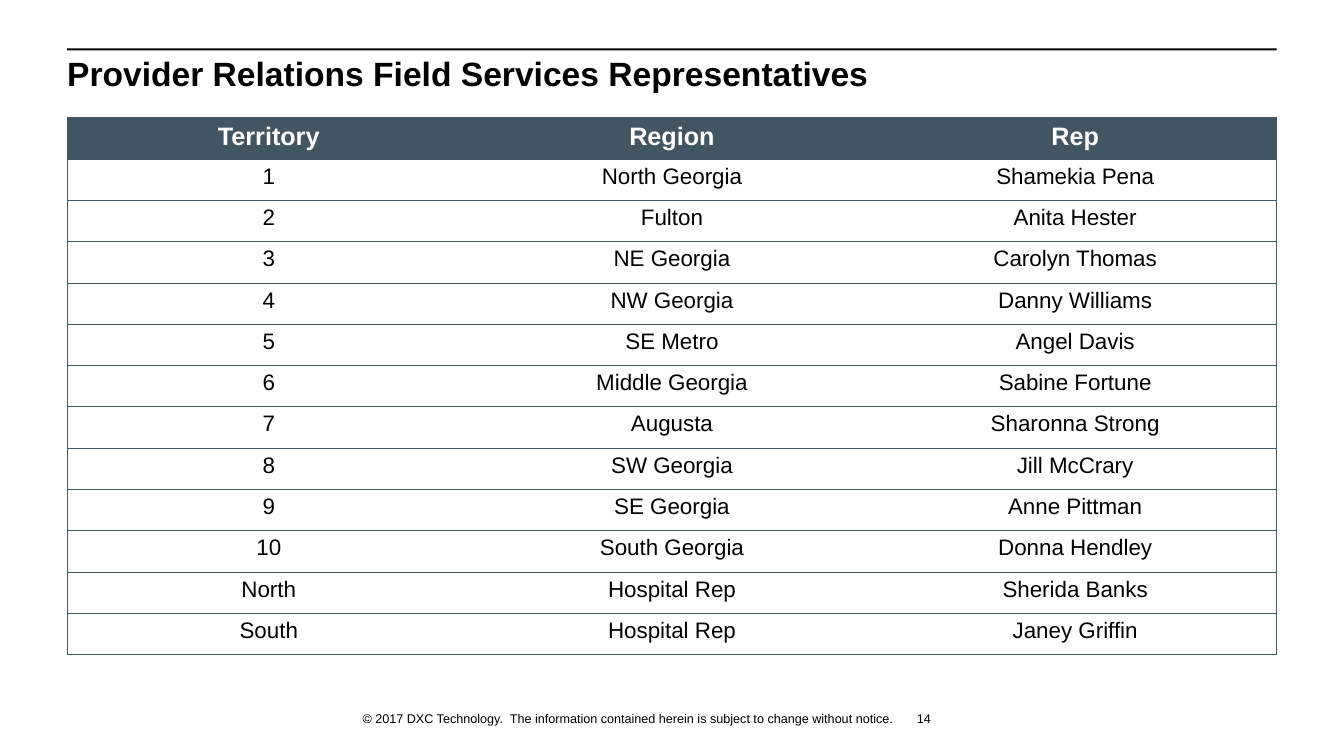
import pptx
import pptx.dml.color
import pptx.enum.shapes
import pptx.enum.text
import pptx.oxml
import pptx.oxml.ns
import pptx.util
from lxml import etree

Pt = pptx.util.Pt
ALIGN = pptx.enum.text.PP_ALIGN
ANCHOR = pptx.enum.text.MSO_ANCHOR
SLATE = "425563"
BLACK = "000000"
WHITE = "FFFFFF"

REPRESENTATIVES = [
    ("Territory", "Region", "Rep"),
    ("1", "North Georgia", "Shamekia Pena"),
    ("2", "Fulton", "Anita Hester"),
    ("3", "NE Georgia", "Carolyn Thomas"),
    ("4", "NW Georgia", "Danny Williams"),
    ("5", "SE Metro", "Angel Davis"),
    ("6", "Middle Georgia", "Sabine Fortune"),
    ("7", "Augusta", "Sharonna Strong"),
    ("8", "SW Georgia", "Jill McCrary"),
    ("9", "SE Georgia", "Anne Pittman"),
    ("10", "South Georgia", "Donna Hendley"),
    ("North", "Hospital Rep", "Sherida Banks"),
    ("South", "Hospital Rep", "Janey Griffin"),
]


def color(hex_value):
    return pptx.dml.color.RGBColor.from_string(hex_value)


def write(frame, text, size, hex_value, align, bold=False):
    frame.text = text
    paragraph = frame.paragraphs[0]
    paragraph.alignment = align
    for run in paragraph.runs:
        run.font.name = "Arial"
        run.font.size = Pt(size)
        run.font.bold = bold
        run.font.color.rgb = color(hex_value)


def set_border(cell, side, hex_value):
    border = etree.SubElement(cell._tc.get_or_add_tcPr(), pptx.oxml.ns.qn(f"a:ln{side}"))
    border.set("w", str(Pt(0.5)))
    if hex_value is None:
        etree.SubElement(border, pptx.oxml.ns.qn("a:noFill"))
    else:
        fill = etree.SubElement(border, pptx.oxml.ns.qn("a:solidFill"))
        etree.SubElement(fill, pptx.oxml.ns.qn("a:srgbClr")).set("val", hex_value)


def add_heading(slide, left, top, width, height):
    rule = slide.shapes.add_shape(
        pptx.enum.shapes.MSO_SHAPE.RECTANGLE, Pt(left), Pt(top), Pt(width), Pt(1.44))
    rule.shadow.inherit = False
    rule.fill.solid()
    rule.fill.fore_color.rgb = color(BLACK)
    rule.line.fill.background()

    title = slide.shapes.title
    title.left, title.top = Pt(left), Pt(top + 6.5)
    title.width, title.height = Pt(width), Pt(height - 6.5)
    frame = title.text_frame
    frame.auto_size = pptx.enum.text.MSO_AUTO_SIZE.NONE
    frame.word_wrap = True
    frame.vertical_anchor = ANCHOR.TOP
    frame.margin_left = frame.margin_right = frame.margin_top = frame.margin_bottom = 0
    write(frame, "Provider Relations Field Services Representatives", 24, BLACK, ALIGN.LEFT, True)
    frame.paragraphs[0].line_spacing = 0.9


def add_representatives(slide, left, top, width, height):
    row_count, column_count = len(REPRESENTATIVES), len(REPRESENTATIVES[0])
    table = slide.shapes.add_table(
        row_count, column_count, Pt(left), Pt(top), Pt(width), Pt(height)).table
    table.horz_banding = False
    for column in table.columns:
        column.width = Pt(width / column_count)
    for row_index, entries in enumerate(REPRESENTATIVES):
        table.rows[row_index].height = Pt(height / row_count)
        is_header = row_index == 0
        for column_index, entry in enumerate(entries):
            cell = table.cell(row_index, column_index)
            set_border(cell, "L", SLATE if column_index == 0 else None)
            set_border(cell, "R", SLATE if column_index == column_count - 1 else None)
            set_border(cell, "T", SLATE)
            set_border(cell, "B", SLATE)
            if is_header:
                cell.fill.solid()
                cell.fill.fore_color.rgb = color(SLATE)
            else:
                cell.fill.background()
            write(cell.text_frame, entry, 18 if is_header else 16,
                  WHITE if is_header else BLACK, ALIGN.CENTER, is_header)


def add_footer(slide, left, top, width, height):
    frame = slide.shapes.add_textbox(Pt(left), Pt(top), Pt(width), Pt(height)).text_frame
    frame.word_wrap = True
    frame.vertical_anchor = ANCHOR.MIDDLE
    write(frame, "© 2017 DXC Technology.  The information contained herein is subject to "
          "change without notice.\t14", 9, BLACK, ALIGN.RIGHT)


def main():
    presentation = pptx.Presentation()
    presentation.slide_width, presentation.slide_height = Pt(960), Pt(540)
    slide = presentation.slides.add_slide(presentation.slide_layouts[5])
    add_heading(slide, 48, 34.5, 864, 61)
    add_representatives(slide, 48, 84, 864, 383.76)
    add_footer(slide, 186, 498, 486, 30)
    presentation.save("out.pptx")


if __name__ == "__main__":
    main()
